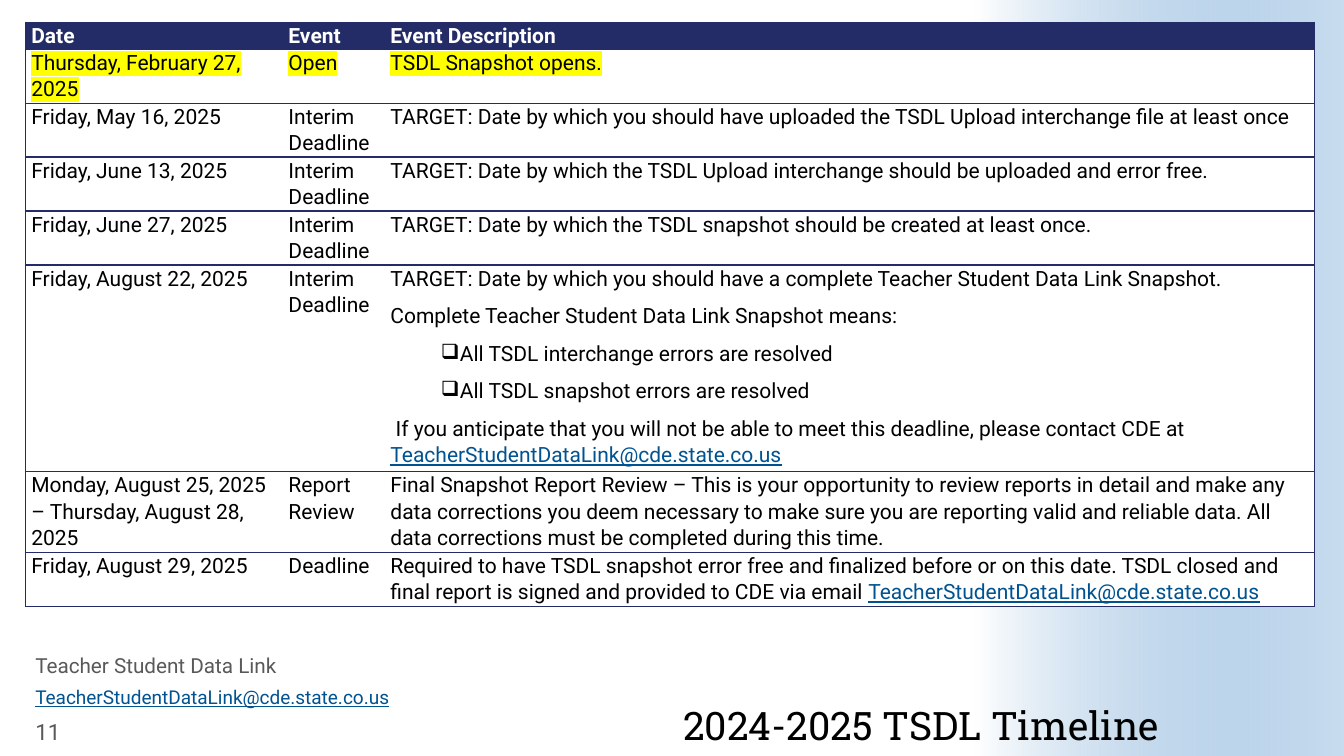
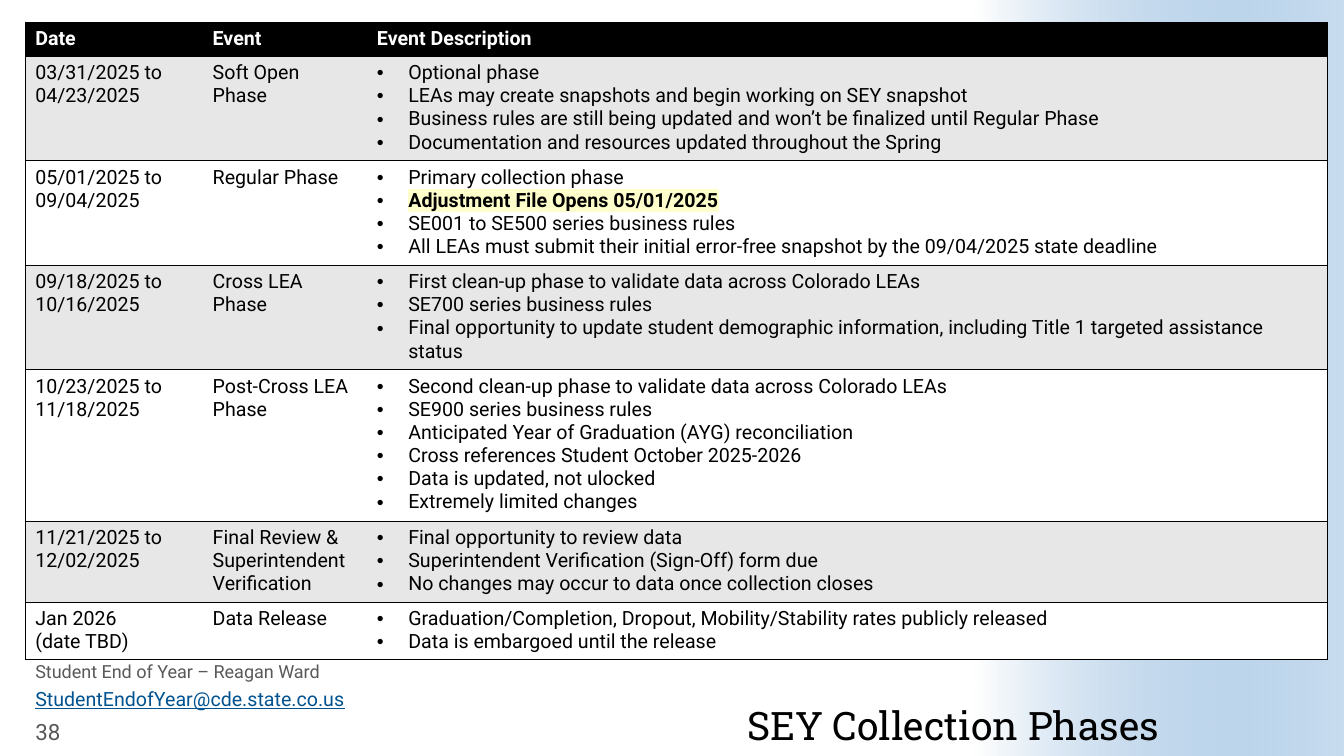
from dataclasses import dataclass

from lxml.etree import SubElement
from pptx import Presentation
from pptx.dml.color import RGBColor
from pptx.enum.shapes import MSO_SHAPE
from pptx.enum.text import MSO_ANCHOR as ANCHOR, PP_ALIGN as ALIGN
from pptx.oxml.ns import qn
from pptx.util import Cm, Pt

WHITE = RGBColor(0xFF, 0xFF, 0xFF)
BLACK = RGBColor(0x00, 0x00, 0x00)
NAVY = RGBColor(0x23, 0x2C, 0x67)
SKY = RGBColor(0x48, 0x8B, 0xC9)
LINK = RGBColor(0x00, 0x53, 0x90)
GRAY = RGBColor(0x59, 0x59, 0x59)
PALE = RGBColor(0xE7, 0xE7, 0xE7)
YELLOW = RGBColor(0xFF, 0xFF, 0x00)
CREAM = RGBColor(0xFF, 0xFF, 0xCC)

BODY_FONT = "Roboto"
TITLE_FONT = "Roboto Slab"
SLIDE_WIDTH, SLIDE_HEIGHT = 33.87, 19.05
LEFT = 0.64
HEADINGS = ("Date", "Event", "Event Description")
TSDL_EMAIL = "TeacherStudentDataLink@cde.state.co.us"


@dataclass
class Line:
    """One paragraph: its text, an optional trailing address and its accents."""
    text: str
    email: str = ""
    bold: bool = False
    highlight: RGBColor = None
    bullet: tuple = None


@dataclass
class TableStyle:
    header: RGBColor
    band: RGBColor
    size: float
    margins: tuple
    line_spacing: float = 1.0
    space_after: float = 0
    description_bullet: tuple = None


# A bullet is its character, left margin, hanging indent and font
CHECKBOX = ("❑", 1.75, 0.48, None)
DOT = ("•", 0.79, 0.79, "Arial")

TSDL_STYLE = TableStyle(NAVY, WHITE, 15, (0.15, 0), 1.07, 8)
SEY_STYLE = TableStyle(BLACK, PALE, 14, (0.25, 0.13), description_bullet=DOT)

TSDL_ROWS = [
    [[Line(text, highlight=YELLOW)] for text in
     ("Thursday, February 27, 2025", "Open", "TSDL Snapshot opens.")],
    ["Friday, May 16, 2025", "Interim Deadline",
     "TARGET: Date by which you should have uploaded the TSDL Upload interchange file at least once"],
    ["Friday, June 13, 2025", "Interim Deadline",
     "TARGET: Date by which the TSDL Upload interchange should be uploaded and error free."],
    ["Friday, June 27, 2025", "Interim Deadline",
     "TARGET: Date by which the TSDL snapshot should be created at least once."],
    ["Friday, August 22, 2025", "Interim Deadline", [
        "TARGET: Date by which you should have a complete Teacher Student Data Link Snapshot.",
        "Complete Teacher Student Data Link Snapshot means:",
        Line("All TSDL interchange errors are resolved", bullet=CHECKBOX),
        Line("All TSDL snapshot errors are resolved", bullet=CHECKBOX),
        Line(" If you anticipate that you will not be able to meet this deadline, "
             "please contact CDE at ", TSDL_EMAIL)]],
    ["Monday, August 25, 2025 – Thursday, August 28, 2025", "Report Review",
     "Final Snapshot Report Review – This is your opportunity to review reports in detail and "
     "make any data corrections you deem necessary to make sure you are reporting valid and "
     "reliable data. All data corrections must be completed during this time."],
    ["Friday, August 29, 2025", "Deadline", [
        Line("Required to have TSDL snapshot error free and finalized before or on this date. "
             "TSDL closed and final report is signed and provided to CDE via email ", TSDL_EMAIL)]],
]

SEY_ROWS = [
    ["03/31/2025 to 04/23/2025", "Soft Open Phase", [
        "Optional phase",
        "LEAs may create snapshots and begin working on SEY snapshot",
        "Business rules are still being updated and won’t be finalized until Regular Phase",
        "Documentation and resources updated throughout the Spring"]],
    ["05/01/2025 to 09/04/2025", "Regular Phase", [
        "Primary collection phase",
        Line("Adjustment File Opens 05/01/2025", bold=True, highlight=CREAM),
        "SE001 to SE500 series business rules",
        "All LEAs must submit their initial error-free snapshot by the 09/04/2025 state deadline"]],
    ["09/18/2025 to 10/16/2025", "Cross LEA Phase", [
        "First clean-up phase to validate data across Colorado LEAs",
        "SE700 series business rules",
        "Final opportunity to update student demographic information, "
        "including Title 1 targeted assistance status"]],
    ["10/23/2025 to 11/18/2025", "Post-Cross LEA Phase", [
        "Second clean-up phase to validate data across Colorado LEAs",
        "SE900 series business rules",
        "Anticipated Year of Graduation (AYG) reconciliation",
        "Cross references Student October 2025-2026",
        "Data is updated, not ulocked",
        "Extremely limited changes"]],
    ["11/21/2025 to 12/02/2025", "Final Review & Superintendent Verification", [
        "Final opportunity to review data",
        "Superintendent Verification (Sign-Off) form due",
        "No changes may occur to data once collection closes"]],
    ["Jan 2026\n(date TBD)", "Data Release", [
        "Graduation/Completion, Dropout, Mobility/Stability rates publicly released",
        "Data is embargoed until the release"]],
]


def add_bullet(paragraph, character, margin, hanging, font):
    properties = paragraph._p.get_or_add_pPr()
    properties.set("marL", str(Cm(margin)))
    properties.set("indent", str(-Cm(hanging)))
    if font:
        SubElement(properties, qn("a:buFont"), typeface=font)
    SubElement(properties, qn("a:buChar"), char=character)


def add_run(paragraph, text, size, color, font, bold=False, underline=False, highlight=None):
    run = paragraph.add_run()
    run.text = text
    run.font.size = Pt(size)
    run.font.bold = bold
    run.font.underline = underline
    run.font.color.rgb = color
    if highlight is not None:
        mark = SubElement(run._r.get_or_add_rPr(), qn("a:highlight"))
        SubElement(mark, qn("a:srgbClr"), val=str(highlight))
    run.font.name = font


def write_text(frame, content, size, color=BLACK, font=BODY_FONT, bold=False, align=ALIGN.LEFT,
               line_spacing=1.0, space_after=0, bullet=None):
    """Fill a text frame with a string or a list of strings and Lines."""
    entries = [content] if isinstance(content, (str, Line)) else content
    for index, entry in enumerate(entries):
        line = entry if isinstance(entry, Line) else Line(entry)
        paragraph = frame.add_paragraph() if index else frame.paragraphs[0]
        if line.bullet or bullet:
            add_bullet(paragraph, *(line.bullet or bullet))
        paragraph.alignment = align
        paragraph.line_spacing = line_spacing
        paragraph.space_after = Pt(space_after)
        parts = line.text.split("\n") if line.text else []
        for position, part in enumerate(parts):
            if position:
                paragraph.add_line_break()
            add_run(paragraph, part, size, color, font, bold or line.bold,
                    highlight=line.highlight)
        if line.email:
            add_run(paragraph, line.email, size, LINK, font, underline=True)


def add_text(slide, box, content, anchor=ANCHOR.TOP, margins=(0.25, 0.13), **text_format):
    frame = slide.shapes.add_textbox(*map(Cm, box)).text_frame
    frame.word_wrap = True
    frame.vertical_anchor = anchor
    frame.margin_left = frame.margin_right = Cm(margins[0])
    frame.margin_top = frame.margin_bottom = Cm(margins[1])
    write_text(frame, content, **text_format)


def add_side_fade(slide, center_x, center_y, length, depth):
    """Soft blue band that fades to the left, turned to run down the slide."""
    band = slide.shapes.add_shape(MSO_SHAPE.RECTANGLE, Cm(center_x - length / 2),
                                  Cm(center_y - depth / 2), Cm(length), Cm(depth))
    band.rotation = 270
    band.shadow.inherit = False
    band.line.fill.background()
    band.fill.gradient()
    band.fill.gradient_angle = 270
    for stop, color, position in zip(band.fill.gradient_stops, (WHITE, SKY), (0, 1)):
        stop.color.rgb = color
        stop.position = position
    last_color = list(band.element.spPr.iter(qn("a:srgbClr")))[-1]
    SubElement(last_color, qn("a:alpha"), val="30000")


def set_borders(cell, color, sides):
    """Draw the named sides of a cell and clear the others."""
    properties = cell._tc.get_or_add_tcPr()
    for side in "LRTB":
        line = SubElement(properties, qn(f"a:ln{side}"), w=str(Pt(1)))
        if side in sides:
            fill = SubElement(line, qn("a:solidFill"))
            SubElement(fill, qn("a:srgbClr"), val=str(color))
        else:
            SubElement(line, qn("a:noFill"))


def add_schedule(slide, left, top, widths, heights, rows, style):
    all_rows = [HEADINGS, *rows]
    table = slide.shapes.add_table(len(all_rows), len(widths), Cm(left), Cm(top),
                                   Cm(sum(widths)), Cm(sum(heights))).table
    table.horz_banding = False
    for column, width in zip(table.columns, widths):
        column.width = Cm(width)
    for row, height in zip(table.rows, heights):
        row.height = Cm(height)
    sides = ("LTB", "TB", "RTB")
    for row_index, contents in enumerate(all_rows):
        is_header = row_index == 0
        fill = style.header if is_header else style.band if row_index % 2 else WHITE
        for column_index, content in enumerate(contents):
            cell = table.cell(row_index, column_index)
            set_borders(cell, style.header, sides[column_index])
            cell.fill.solid()
            cell.fill.fore_color.rgb = fill
            cell.margin_left = cell.margin_right = Cm(style.margins[0])
            cell.margin_top = cell.margin_bottom = Cm(style.margins[1])
            is_description = column_index == 2 and not is_header
            write_text(cell.text_frame, content, size=style.size, bold=is_header,
                       color=WHITE if is_header else BLACK,
                       line_spacing=style.line_spacing, space_after=style.space_after,
                       bullet=style.description_bullet if is_description else None)


def add_footer(slide, left, name, email, number, name_box, name_format, email_size, anchor):
    top, height = name_box
    add_text(slide, (left, top, 9.88, height), name, anchor=anchor, color=GRAY, **name_format)
    add_text(slide, (left, 17.25, 9.88, 0.79), Line("", email), anchor=anchor,
             size=email_size, line_spacing=0.8)
    add_text(slide, (left, 18.03, 2.16, 0.79), number, anchor=ANCHOR.MIDDLE,
             size=16, color=GRAY)


def add_schedule_slide(presentation, title, widths, heights, rows, style, **footer):
    slide = presentation.slides.add_slide(presentation.slide_layouts[6])
    add_side_fade(slide, 29.21, SLIDE_HEIGHT / 2, SLIDE_HEIGHT, 9.3)
    add_text(slide, (10.82, 16.38, 18.39, 2.49), title, anchor=ANCHOR.BOTTOM, margins=(0, 0),
             size=28, font=TITLE_FONT, align=ALIGN.RIGHT, line_spacing=0.9)
    add_schedule(slide, LEFT, 0.56, widths, heights, rows, style)
    add_footer(slide, LEFT, **footer)


def main():
    presentation = Presentation()
    presentation.slide_width = Cm(SLIDE_WIDTH)
    presentation.slide_height = Cm(SLIDE_HEIGHT)

    # Teacher Student Data Link dates
    add_schedule_slide(
        presentation, "2024-2025 TSDL Timeline", (6.48, 2.57, 23.44),
        (0.65, 1.32, 1.32, 1.32, 1.32, 5.1, 2, 1.32), TSDL_ROWS, TSDL_STYLE,
        name="Teacher Student Data Link", email=TSDL_EMAIL, number="11",
        name_box=(16.43, 0.79), name_format={"size": 14.8, "line_spacing": 0.8},
        email_size=13.6, anchor=ANCHOR.TOP)

    # Student End of Year phases
    add_schedule_slide(
        presentation, "SEY Collection Phases", (4.47, 4.14, 24.21),
        (0.83, 2.6, 2.6, 2.6, 3.75, 2, 1.43), SEY_ROWS, SEY_STYLE,
        name="Student End of Year – Reagan Ward", email="StudentEndofYear@cde.state.co.us",
        number="38", name_box=(16.64, 0.66), name_format={"size": 12.9, "line_spacing": 0.7},
        email_size=14, anchor=ANCHOR.BOTTOM)

    presentation.save("out.pptx")


if __name__ == "__main__":
    main()
